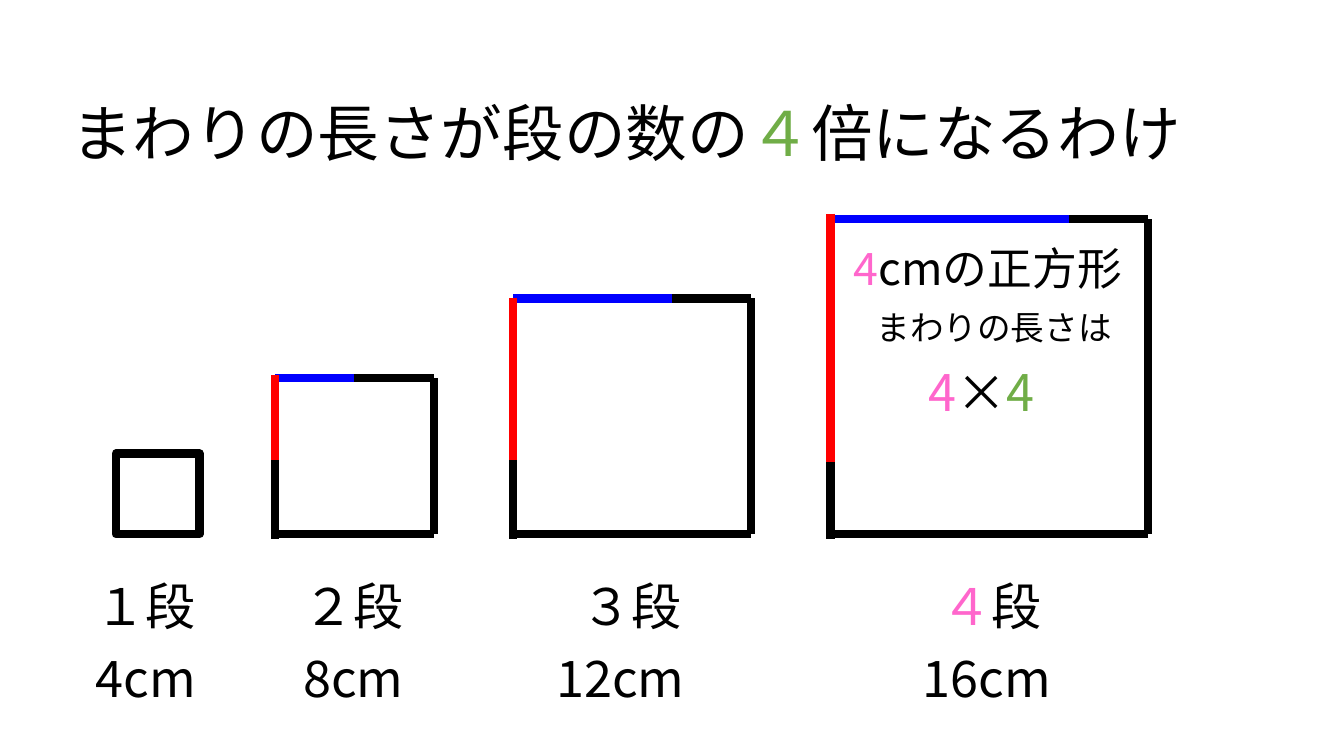
from dataclasses import dataclass

from lxml.etree import SubElement
from pptx import Presentation
from pptx.dml.color import RGBColor
from pptx.enum.shapes import MSO_CONNECTOR, MSO_SHAPE
from pptx.enum.text import MSO_AUTO_SIZE
from pptx.oxml.ns import qn
from pptx.slide import Slide
from pptx.util import Cm, Pt

BLACK = RGBColor(0x00, 0x00, 0x00)
BLUE = RGBColor(0x00, 0x00, 0xFF)
RED = RGBColor(0xFF, 0x00, 0x00)
GREEN = RGBColor(0x70, 0xAD, 0x47)
PINK = RGBColor(0xFF, 0x66, 0xCC)

FONT = "Noto Sans CJK JP"
LINE_WIDTH = Pt(6)

# Lengths in centimetres
UNIT = 2.0
BASE = 13.46
TOP_ORIGIN = 13.52
RED_LENGTH = 2.14
STEP_TOP, STEP_HEIGHT = 11.43, 2.16
LABEL_TOP, LENGTH_TOP, LABEL_HEIGHT = 14.38, 16.18, 1.8


@dataclass
class Square:
    steps: int
    left: float
    red_tops: tuple[float, ...]


@dataclass
class Label:
    left: float
    top: float
    width: float
    height: float
    size: int
    spans: list[tuple[str, RGBColor]]
    wrap: bool = False


SQUARES = [
    Square(2, 6.93, (9.45,)),
    Square(3, 12.93, (9.45, 7.52)),
    Square(4, 20.93, (9.5, 7.52, 5.38)),
]

LABELS = [
    Label(1.55, 2.26, 28.73, 2.13, 44,
          [("まわりの長さが段の数の", BLACK), ("４", GREEN), ("倍になるわけ", BLACK)]),
    Label(2.16, LABEL_TOP, 3.07, LABEL_HEIGHT, 36, [("１段", BLACK)]),
    Label(7.39, LABEL_TOP, 3.07, LABEL_HEIGHT, 36, [("２段", BLACK)]),
    Label(14.4, LABEL_TOP, 3.07, LABEL_HEIGHT, 36, [("３段", BLACK)]),
    Label(23.47, LABEL_TOP, 3.07, LABEL_HEIGHT, 36, [("４", PINK), ("段", BLACK)]),
    Label(2.16, LENGTH_TOP, 3.25, LABEL_HEIGHT, 36, [("4cm", BLACK)]),
    Label(7.39, LENGTH_TOP, 3.25, LABEL_HEIGHT, 36, [("8cm", BLACK)]),
    Label(13.77, LENGTH_TOP, 4.17, LABEL_HEIGHT, 36, [("12cm", BLACK)]),
    Label(23.01, LENGTH_TOP, 4.17, LABEL_HEIGHT, 36, [("16cm", BLACK)]),
    Label(21.26, 5.94, 7.67, 1.63, 32, [("4", PINK), ("cmの正方形", BLACK)], wrap=True),
    Label(23.14, 8.97, 3.61, 1.8, 36, [("4", PINK), ("×", BLACK), ("4", GREEN)]),
    Label(21.84, 7.62, 6.88, 1.27, 24, [("まわりの長さは", BLACK)], wrap=True),
]


def add_line(page: Slide, x1: float, y1: float, x2: float, y2: float,
             color: RGBColor = BLACK) -> None:
    line = page.shapes.add_connector(
        MSO_CONNECTOR.STRAIGHT, Cm(x1), Cm(y1), Cm(x2), Cm(y2))
    line.line.color.rgb = color
    line.line.width = LINE_WIDTH
    SubElement(line._element.spPr, qn("a:effectLst"))


def add_unit_square(page: Slide) -> None:
    box = page.shapes.add_shape(
        MSO_SHAPE.RECTANGLE, Cm(2.92), Cm(STEP_TOP), Cm(2.11), Cm(2.03))
    box.shadow.inherit = False
    box.fill.background()
    box.line.color.rgb = BLACK
    box.line.width = LINE_WIDTH


def add_square(page: Slide, square: Square) -> None:
    """Draw the outline, with every unit but one coloured at the top and left."""
    left = square.left
    right = left + UNIT * square.steps
    top = TOP_ORIGIN - UNIT * square.steps
    add_line(page, left, STEP_TOP, left, STEP_TOP + STEP_HEIGHT)
    add_line(page, left, BASE, right, BASE)
    add_line(page, right, top, right, BASE)
    add_line(page, right - UNIT, top, right, top)
    for step in range(square.steps - 1):
        start = left + UNIT * step
        add_line(page, start, top, start + UNIT, top, BLUE)
    for red_top in square.red_tops:
        add_line(page, left, red_top, left, red_top + RED_LENGTH, RED)


def add_label(page: Slide, label: Label) -> None:
    box = page.shapes.add_textbox(
        Cm(label.left), Cm(label.top), Cm(label.width), Cm(label.height))
    frame = box.text_frame
    frame.word_wrap = label.wrap
    frame.auto_size = MSO_AUTO_SIZE.SHAPE_TO_FIT_TEXT
    para = frame.paragraphs[0]
    para.font.size = Pt(label.size)
    para.font.name = FONT
    defaults = para._p.pPr.find(qn("a:defRPr"))
    SubElement(defaults, qn("a:ea"), typeface=FONT)
    for text, color in label.spans:
        span = para.add_run()
        span.text = text
        span.font.color.rgb = color


def main() -> None:
    deck = Presentation()
    deck.slide_width, deck.slide_height = Cm(33.87), Cm(19.05)
    page = deck.slides.add_slide(deck.slide_layouts[6])
    add_unit_square(page)
    for square in SQUARES:
        add_square(page, square)
    for label in LABELS:
        add_label(page, label)
    deck.save("out.pptx")


if __name__ == "__main__":
    main()
